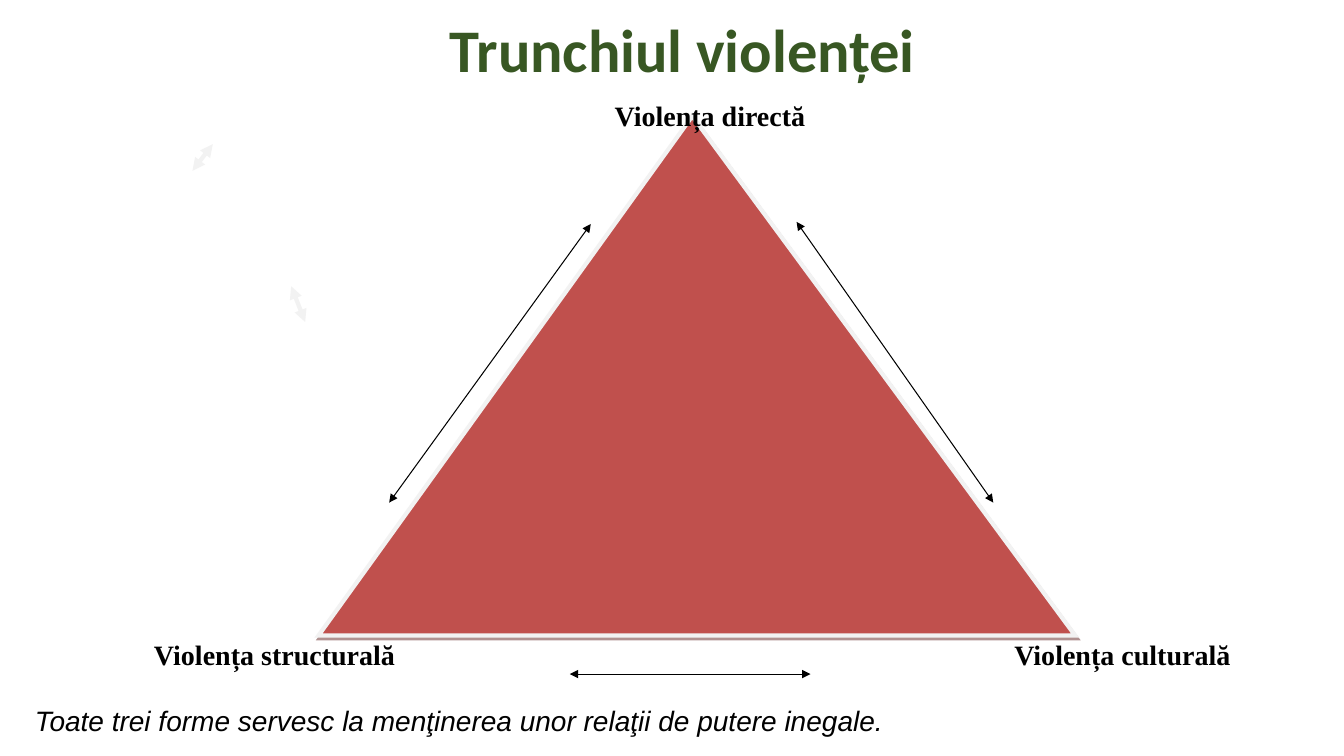
import dataclasses

import pptx
import pptx.dml.color
import pptx.enum.shapes
import pptx.enum.text
import pptx.oxml
import pptx.oxml.ns
import pptx.util

Pt = pptx.util.Pt
RGB = pptx.dml.color.RGBColor.from_string
ALIGN = pptx.enum.text.PP_ALIGN


@dataclasses.dataclass(frozen=True)
class Theme:
    title: str = "385723"
    text: str = "000000"
    triangle: str = "C0504D"
    outline: str = "F2F2F2"
    shadow: str = "622423"
    title_size: float = 43.2
    text_size: float = 20
    thin: float = 0.75
    thick: float = 3
    title_font: str = "Calibri"
    label_font: str = "Times New Roman"
    note_font: str = "Arial"


T = Theme()


def add_xml(parent, tag, body="", **attrs):
    """Append one DrawingML element to parent."""
    attr_text = "".join(f' {k}="{v}"' for k, v in attrs.items())
    ns = pptx.oxml.ns.nsdecls("a")
    parent.append(pptx.oxml.parse_xml(f"<a:{tag} {ns}{attr_text}>{body}</a:{tag}>"))


def write(tf, text, font, size, color, bold=False, italic=False, align=ALIGN.LEFT):
    """Fill a text frame with one formatted run, centred vertically."""
    tf.word_wrap = True
    tf.auto_size = pptx.enum.text.MSO_AUTO_SIZE.NONE
    tf.vertical_anchor = pptx.enum.text.MSO_ANCHOR.MIDDLE
    p = tf.paragraphs[0]
    p.alignment = align
    r = p.add_run()
    r.text = text
    r.font.name, r.font.size = font, Pt(size)
    r.font.bold, r.font.italic = bold, italic
    r.font.color.rgb = RGB(color)
    return p


def add_title(s, box, text):
    sp = s.shapes.title
    sp.left, sp.top, sp.width, sp.height = map(Pt, box)
    p = write(sp.text_frame, text, T.title_font, T.title_size, T.title,
              bold=True, align=ALIGN.CENTER)
    p.line_spacing = 0.9


def add_text(s, box, text, **style):
    tf = s.shapes.add_textbox(*map(Pt, box)).text_frame
    tf.margin_left = tf.margin_right = tf.margin_top = tf.margin_bottom = 0
    write(tf, text, size=T.text_size, color=T.text, **style)


def add_arrow(s, start, end, color, width):
    """Draw a straight line with a triangle head at both ends."""
    line = s.shapes.add_connector(pptx.enum.shapes.MSO_CONNECTOR.STRAIGHT,
                                  *map(Pt, start + end))
    line.line.color.rgb = RGB(color)
    line.line.width = Pt(width)
    ln = line.line._get_or_add_ln()
    for tag in ("headEnd", "tailEnd"):
        add_xml(ln, tag, type="triangle")
    add_xml(line._element.spPr, "effectLst")


def add_triangle(s, box):
    sp = s.shapes.add_shape(pptx.enum.shapes.MSO_SHAPE.ISOSCELES_TRIANGLE, *map(Pt, box))
    sp.adjustments[0] = 0.494
    sp.fill.solid()
    sp.fill.fore_color.rgb = RGB(T.triangle)
    sp.line.color.rgb = RGB(T.outline)
    sp.line.width = Pt(T.thick)
    add_xml(sp.line._get_or_add_ln(), "miter", lim=800000)
    color = f'<a:srgbClr val="{T.shadow}"><a:alpha val="50000"/></a:srgbClr>'
    shadow = (f'<a:outerShdw dist="{Pt(2.2)}" dir="{63 * 60000}" algn="ctr" '
              f'rotWithShape="0">{color}</a:outerShdw>')
    add_xml(sp._element.spPr, "effectLst", shadow)


def add_violence_diagram(s, box):
    """Place the triangle in box, with its corner labels and side arrows around it."""
    x, y, w, h = box
    add_triangle(s, box)
    for start, end in [((-90, 39), (-75.5, 20)), ((-19.5, 121.5), (-9.5, 147))]:
        add_arrow(s, (x + start[0], y + start[1]), (x + end[0], y + end[1]),
                  T.outline, T.thick)
    for start, end in [((50.5, 276), (194.5, 77)),
                       ((482, 276), (341.5, 75.5)),
                       ((179.5, h + 27.5), (351.5, h + 27.5))]:
        add_arrow(s, (x + start[0], y + start[1]), (x + end[0], y + end[1]),
                  T.text, T.thin)
    for text, dx, dy in [("Violența directă", 211.5, -1),
                         ("Violența structurală", -117.5, h + 13.5),
                         ("Violența culturală", 497, h + 13.5)]:
        add_text(s, (x + dx, y + dy - 12, 200, 24), text, font=T.label_font, bold=True)


def main():
    prs = pptx.Presentation()
    prs.slide_width, prs.slide_height = Pt(960), Pt(540)
    s = prs.slides.add_slide(prs.slide_layouts.get_by_name("Title Only"))
    add_title(s, (39, 12, 897, 52), "Trunchiul violenței")
    add_violence_diagram(s, (227.5, 83, 540.5, 371))
    add_text(s, (25, 502.5, 900, 24),
             "Toate trei forme servesc la menţinerea unor relaţii de putere inegale.",
             font=T.note_font, italic=True)
    prs.save("out.pptx")


if __name__ == "__main__":
    main()
